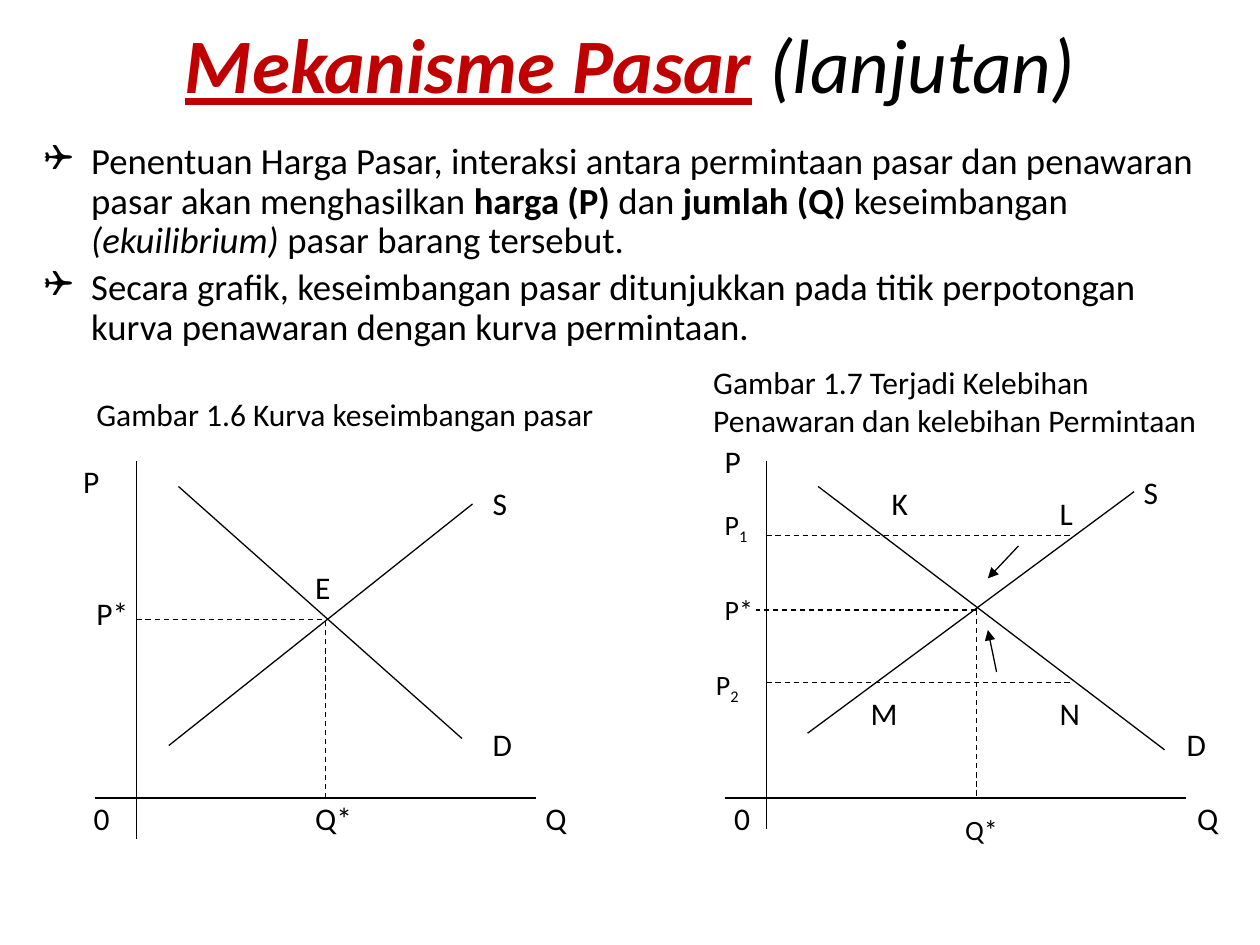
"""Build a slide on market equilibrium with two supply and demand diagrams."""
from dataclasses import dataclass

from lxml import etree
from pptx import Presentation
from pptx.dml.color import RGBColor
from pptx.enum.dml import MSO_LINE
from pptx.enum.shapes import MSO_CONNECTOR
from pptx.enum.text import MSO_ANCHOR, MSO_AUTO_SIZE, PP_ALIGN
from pptx.oxml.ns import qn
from pptx.shapes.autoshape import Shape
from pptx.slide import Slide
from pptx.text.text import _Paragraph, _Run
from pptx.util import Pt

STRAIGHT = MSO_CONNECTOR.STRAIGHT
DASH = MSO_LINE.DASH
MIDDLE = MSO_ANCHOR.MIDDLE
FIT_SHAPE = MSO_AUTO_SIZE.SHAPE_TO_FIT_TEXT
CENTER = PP_ALIGN.CENTER
FONT = "Calibri"
BLACK = "000000"
RED = "C00000"
BASELINE = 456
INDENT = 27


@dataclass(frozen=True)
class Span:
    """A stretch of text with one format."""

    text: str
    bold: bool = False
    italic: bool = False
    underline: bool = False
    color: str = BLACK


@dataclass(frozen=True)
class Label:
    """A short text beside a diagram, with an optional subscript."""

    text: str
    left: float
    top: float
    width: float
    size: float = 18
    subscript: str = ""
    height: float = 30


@dataclass(frozen=True)
class Line:
    """A straight line of a diagram."""

    x1: float
    y1: float
    x2: float
    y2: float
    dashed: bool = False
    arrow: bool = False


TITLE = [
    Span("Mekanisme Pasar", bold=True, italic=True, underline=True, color=RED),
    Span(" ", bold=True, italic=True, color=RED),
    Span("(lanjutan)", italic=True),
]
BULLETS = [
    [
        Span("Penentuan Harga Pasar, interaksi antara permintaan pasar dan "
             "penawaran pasar akan menghasilkan "),
        Span("harga (P) ", bold=True),
        Span("dan "),
        Span("jumlah (Q) ", bold=True),
        Span("keseimbangan "),
        Span("(ekuilibrium) ", italic=True),
        Span("pasar barang tersebut."),
    ],
    [Span("Secara grafik, keseimbangan pasar ditunjukkan pada titik "
          "perpotongan kurva penawaran dengan kurva permintaan.")],
]
EQUILIBRIUM_LINES = [
    Line(78, 263.5, 78, 479.5),
    Line(54, BASELINE, 306, BASELINE),
    Line(96.5, 426, 270, 288),
    Line(102, 278, 264, 422),
    Line(78, 354, 186, 354, dashed=True),
    Line(186, BASELINE, 186, 354, dashed=True),
]
EQUILIBRIUM_LABELS = [
    Label("Gambar 1.6 Kurva keseimbangan pasar", 48, 222, 353),
    Label("P", 40.5, 260.5, 27.5),
    Label("S", 274.5, 273, 27.5),
    Label("E", 173, 321, 27.5),
    Label("P*", 48, 336, 34.5),
    Label("D", 274.5, 411, 28),
    Label("0", 46.5, 453, 25),
    Label("Q*", 173, 453, 36.5),
    Label("Q", 304.5, 453, 29.5),
]
SURPLUS_LINES = [
    Line(438, 263.5, 438, 474),
    Line(414, BASELINE, 677.5, BASELINE),
    Line(461.5, 419, 648, 281),
    Line(467.5, 278, 665.5, 428.5),
    Line(438, 306, 612, 306, dashed=True),
    Line(438, 390, 612, 390, dashed=True),
    Line(558, 348.5, 558, BASELINE, dashed=True),
    Line(558, 348.5, 432, 348.5, dashed=True),
    Line(569.5, 384, 564.5, 360, arrow=True),
    Line(582, 312, 564.5, 330.5, arrow=True),
]
SURPLUS_LABELS = [
    Label("Gambar 1.7 Terjadi Kelebihan\nPenawaran dan kelebihan Permintaan",
          400.5, 204, 337.5, height=52.5),
    Label("P", 407, 249, 27.5),
    Label("S", 646.5, 267, 27.5),
    Label("K", 502.5, 273, 27.5),
    Label("L", 598.5, 279, 25),
    Label("P", 407, 286.5, 31, 16, "1", 26.5),
    Label("P*", 407, 335, 31.5, 16, height=26.5),
    Label("P", 402, 378, 31, 16, "2", 26.5),
    Label("M", 490.5, 393, 30),
    Label("N", 598.5, 393, 28),
    Label("D", 671, 411, 28),
    Label("0", 412.5, 453, 25),
    Label("Q*", 544.5, 461, 33, 16, height=26.5),
    Label("Q", 677, 453, 29.5),
]


def rgb(value: str) -> RGBColor:
    """Turn a hex string into a colour."""
    return RGBColor.from_string(value)


def format_run(run: _Run, size: float, span: Span) -> None:
    """Apply the font, size, emphasis and colour to a run."""
    font = run.font
    font.name, font.size = FONT, Pt(size)
    font.bold, font.italic, font.underline = span.bold, span.italic, span.underline
    font.color.rgb = rgb(span.color)


def write_spans(para: _Paragraph, spans: list[Span], size: float) -> None:
    """Write formatted spans into a paragraph."""
    for span in spans:
        run = para.add_run()
        run.text = span.text
        format_run(run, size, span)


def add_box(page: Slide, left: float, top: float, width: float, height: float) -> Shape:
    """Add a wrapping text box."""
    box = page.shapes.add_textbox(Pt(left), Pt(top), Pt(width), Pt(height))
    box.text_frame.word_wrap = True
    return box


def add_title(page: Slide) -> None:
    """Add the centred heading."""
    frame = add_box(page, 36, -18, 648, 108).text_frame
    frame.vertical_anchor = MIDDLE
    para = frame.paragraphs[0]
    para.alignment = CENTER
    write_spans(para, TITLE, 44)


def add_bullets(page: Slide) -> None:
    """Add the bulleted explanation."""
    frame = add_box(page, 18, 78, 677.5, 138).text_frame
    for index, spans in enumerate(BULLETS):
        para = frame.add_paragraph() if index else frame.paragraphs[0]
        para.line_spacing = 0.9
        para.space_before = Pt(4.2)
        write_spans(para, spans, 21)
        properties = para._p.get_or_add_pPr()
        properties.set("marL", str(Pt(INDENT)))
        properties.set("indent", str(Pt(-INDENT)))
        etree.SubElement(properties, qn("a:buFont"), typeface="Wingdings")
        etree.SubElement(properties, qn("a:buChar"), char="❑")


def add_label(page: Slide, label: Label) -> None:
    """Add a label that does not wrap."""
    frame = add_box(page, label.left, label.top, label.width, label.height).text_frame
    frame.word_wrap = False
    frame.auto_size = FIT_SHAPE
    frame.text = label.text
    for para in frame.paragraphs:
        format_run(para.runs[0], label.size, Span(label.text))
    if label.subscript:
        write_spans(frame.paragraphs[0], [Span(label.subscript)], label.size)
        frame.paragraphs[0].runs[1].font._element.set("baseline", "-25000")


def add_line(page: Slide, line: Line) -> None:
    """Add a thin line, dashed or with an arrowhead if asked."""
    connector = page.shapes.add_connector(
        STRAIGHT, Pt(line.x1), Pt(line.y1), Pt(line.x2), Pt(line.y2))
    connector.line.width = Pt(0.75)
    connector.line.color.rgb = rgb(BLACK)
    if line.dashed:
        connector.line.dash_style = DASH
    if line.arrow:
        etree.SubElement(connector.line._get_or_add_ln(), qn("a:tailEnd"), type="triangle")
    etree.SubElement(connector._element.spPr, qn("a:effectLst"))


def main() -> None:
    """Build and save the deck."""
    deck = Presentation()
    deck.slide_width, deck.slide_height = Pt(720), Pt(540)
    page = deck.slides.add_slide(deck.slide_layouts[6])
    add_title(page)
    add_bullets(page)
    for line in EQUILIBRIUM_LINES + SURPLUS_LINES:
        add_line(page, line)
    for label in EQUILIBRIUM_LABELS + SURPLUS_LABELS:
        add_label(page, label)
    deck.save("out.pptx")


if __name__ == "__main__":
    main()
